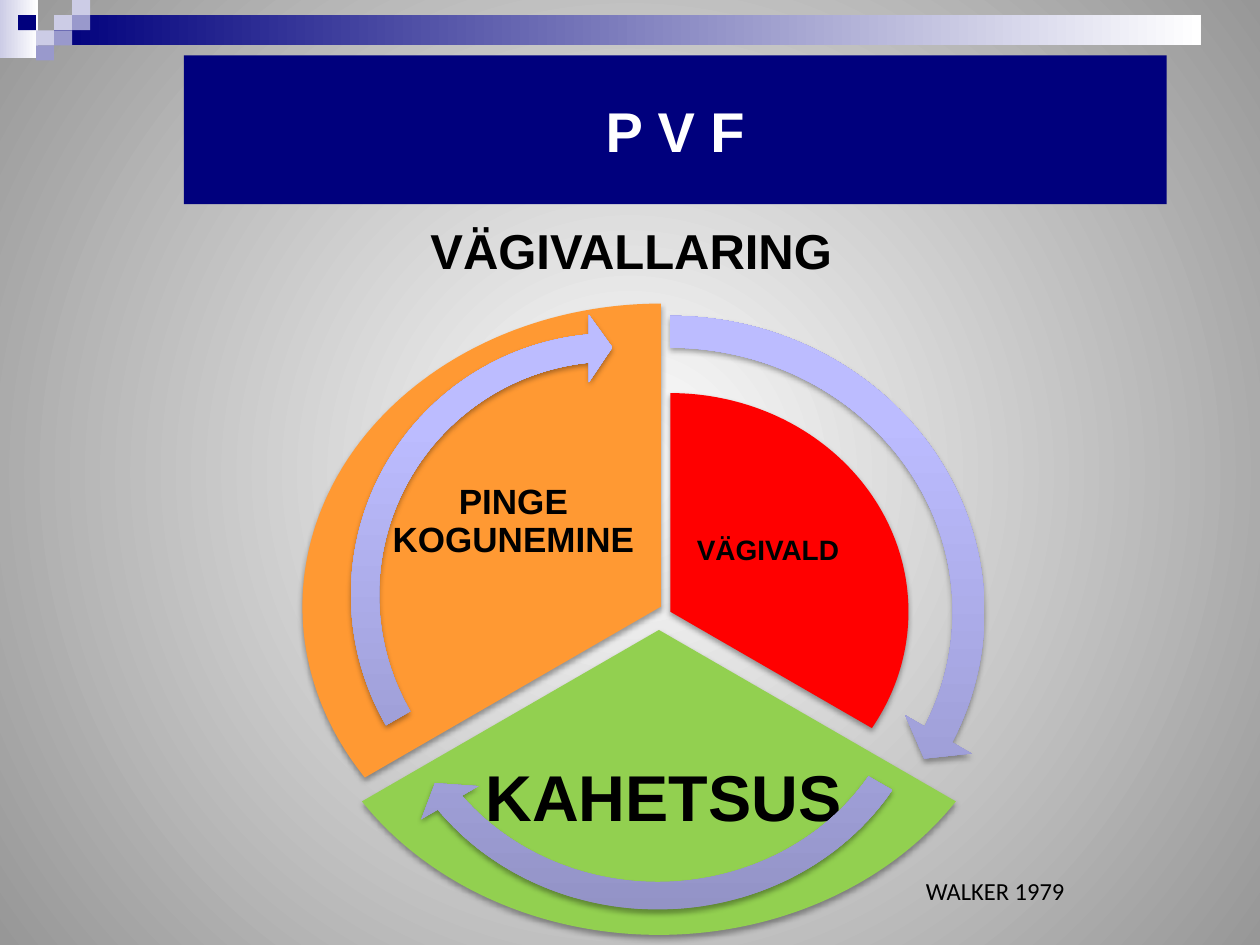
from lxml import etree
from pptx import Presentation
from pptx import util as u
from pptx.dml.color import RGBColor
from pptx.enum import shapes, text
from pptx.oxml import ns

NAVY, LAVENDER, BLUE = "00007D", "CCCCE6", "9999CC"
BLACK, WHITE = "000000", "FFFFFF"
ARROW_STOPS = [(0, "9191C4"), (80, "BCBCFF"), (100, "BEBEFF")]
CELL = u.Inches(0.1)
DEGREE = 0.6


def color(value):
    return RGBColor.from_string(value)


def add_child(parent, tag, **attributes):
    return etree.SubElement(parent, ns.qn(tag), {k: str(v) for k, v in attributes.items()})


def fill_gradient(fill, properties, stops, angle=None):
    fill.solid()
    solid = properties.find(ns.qn("a:solidFill"))
    gradient = etree.Element(ns.qn("a:gradFill"), rotWithShape="1")
    stop_list = add_child(gradient, "a:gsLst")
    for position, value in stops:
        stop = add_child(stop_list, "a:gs", pos=position * 1000)
        add_child(stop, "a:srgbClr", val=value)
    if angle is None:
        path = add_child(gradient, "a:path", path="circle")
        add_child(path, "a:fillToRect", l=50000, t=50000, r=50000, b=50000)
    else:
        add_child(gradient, "a:lin", ang=angle * 60000, scaled=0)
    properties.replace(solid, gradient)


def place(box, left, top, width, height):
    return [round(CELL * n) for n in (box[0] + left, box[1] + top, width, height)]


def add_block(slide, kind, frame, fill, angle=0):
    shape = slide.shapes.add_shape(kind, *frame)
    shape.shadow.inherit = False
    shape.line.fill.background()
    if isinstance(fill, str):
        shape.fill.solid()
        shape.fill.fore_color.rgb = color(fill)
    else:
        fill_gradient(shape.fill, shape._element.spPr, fill, angle)
    return shape


def add_shadow(shape):
    effects = shape._element.spPr.find(ns.qn("a:effectLst"))
    shadow = add_child(effects, "a:outerShdw", blurRad=40000, dist=23000,
                       dir=5400000, rotWithShape=0)
    add_child(add_child(shadow, "a:srgbClr", val=BLACK), "a:alpha", val=35000)


def set_adjustments(shape, values):
    for index, value in enumerate(values):
        shape.adjustments[index] = value


def write(shape, words, size, font="Arial", bold=True, value=BLACK,
          align=text.PP_ALIGN.CENTER, anchor=text.MSO_ANCHOR.MIDDLE):
    frame = shape.text_frame
    frame.word_wrap = True
    frame.auto_size = text.MSO_AUTO_SIZE.NONE
    frame.vertical_anchor = anchor
    frame.text = words
    paragraph = frame.paragraphs[0]
    paragraph.alignment = align
    paragraph.font.name = font
    paragraph.font.size = u.Pt(size)
    paragraph.font.bold = bold
    paragraph.font.color.rgb = color(value)
    return frame


def add_banner(slide, box):
    column, row = 1.43, 1.2
    rectangle = shapes.MSO_SHAPE.RECTANGLE
    add_block(slide, rectangle, place(box, 0, 0, 3, 4.6), [(0, LAVENDER), (100, WHITE)])
    add_block(slide, rectangle, place(box, 3 * column, row, 91, 2 * row),
              [(0, NAVY), (100, WHITE)])
    squares = [(3, 1, LAVENDER), (4, 0, LAVENDER), (4, 1, BLUE), (2, 2, LAVENDER),
               (1, 1, NAVY), (3, 2, BLUE), (2, 3, BLUE)]
    for across, down, fill in squares:
        add_block(slide, rectangle,
                  place(box, across * column, down * row, column, row), fill)


def add_heading(slide, box):
    title = slide.shapes.title
    title.left, title.top, title.width, title.height = place(box, 9.5, 0, 78, 11.8)
    title.fill.solid()
    title.fill.fore_color.rgb = color(NAVY)
    write(title, "P V F", 32, value=WHITE)
    subtitle = slide.shapes.add_textbox(*place(box, 0, 12.6, 90, 6.4))
    write(subtitle, "VÄGIVALLARING", 28, anchor=text.MSO_ANCHOR.TOP)


def add_wheel(slide, box):
    sectors = [
        ((11.3, 8.2, 37.8, 34.7), 270, 30, "FF0000",
         "VÄGIVALD", 16, (31.2, 15.6, 13.5, 10.3), 0.02),
        ((0.8, 2.8, 57, 48.4), 30, 150, "92D050",
         "KAHETSUS", 37, (14.4, 34.2, 30.5, 12.7), 0.05),
        ((1, 1.1, 56.9, 48.1), 150, 270, "FF9933",
         "PINGE KOGUNEMINE", 20, (7.6, 11.3, 20.3, 14.3), 0.03),
    ]
    for area, start, end, fill, words, size, label_area, inset in sectors:
        sector = add_block(slide, shapes.MSO_SHAPE.PIE, place(box, *area), fill)
        set_adjustments(sector, [start * DEGREE, end * DEGREE])
        add_shadow(sector)
        label = slide.shapes.add_textbox(*place(box, *label_area))
        frame = write(label, words, size)
        frame.margin_left = frame.margin_right = u.Inches(inset)
        frame.margin_top = frame.margin_bottom = u.Inches(inset)
        frame.paragraphs[0].line_spacing = 0.9

    arrows = [((3.4, 0.3, 53.5, 50.5), 270, 24.54),
              ((5.7, 7.2, 47, 43.5), 30, 144.53),
              ((3.3, 1.9, 44.6, 44.6), 150, 264.55)]
    for area, start, end in arrows:
        arrow = add_block(slide, shapes.MSO_SHAPE.CIRCULAR_ARROW, place(box, *area),
                          ARROW_STOPS, 270)
        set_adjustments(arrow, [0.05, 5.46 * DEGREE, end * DEGREE, start * DEGREE, 0.06])
        add_shadow(arrow)


def add_source(slide, box):
    source = slide.shapes.add_textbox(*place(box, 0, 0, 20.8, 3.4))
    write(source, "WALKER 1979", 14, "Calibri", False,
          align=text.PP_ALIGN.LEFT, anchor=text.MSO_ANCHOR.TOP)


def main():
    presentation = Presentation()
    presentation.slide_width = 100 * CELL
    presentation.slide_height = 75 * CELL
    slide = presentation.slides.add_slide(presentation.slide_layouts[5])
    background = slide.background.fill
    background.solid()
    properties = slide._element.cSld.find(ns.qn("p:bg")).find(ns.qn("p:bgPr"))
    fill_gradient(background, properties, [(0, WHITE), (100, "979797")])
    add_banner(slide, (0, 0))
    add_heading(slide, (5.1, 4.4))
    add_wheel(slide, (23, 23))
    add_source(slide, (72.5, 69))
    presentation.save("out.pptx")


if __name__ == "__main__":
    main()
